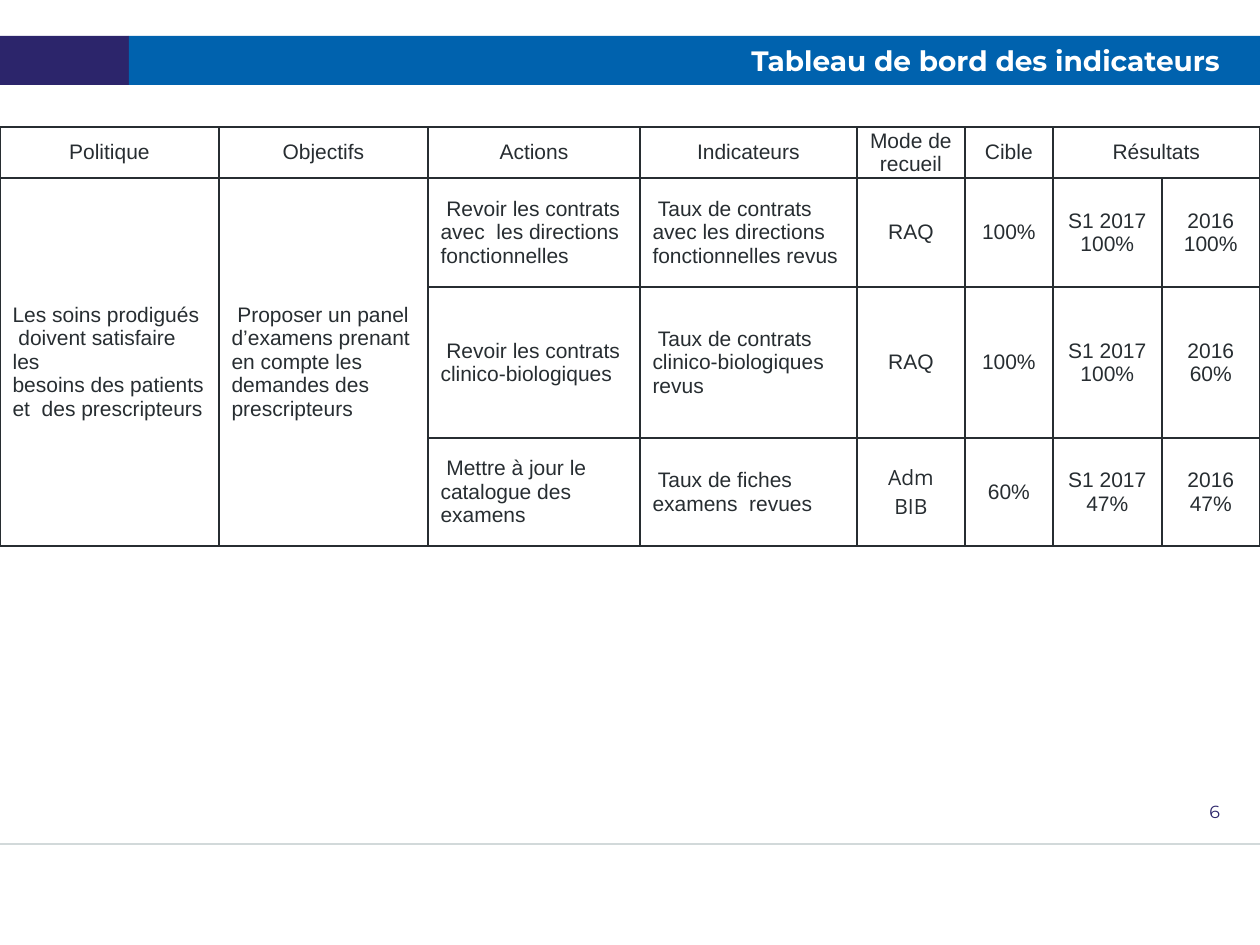
"""Build the indicator dashboard slide."""
from dataclasses import dataclass

from lxml import etree
from pptx import Presentation
from pptx import util as u
from pptx.dml.color import RGBColor
from pptx.enum import shapes, text
from pptx.oxml.ns import qn

SCALE = 914400 / 126
LEFT, CENTER, RIGHT = text.PP_ALIGN.LEFT, text.PP_ALIGN.CENTER, text.PP_ALIGN.RIGHT


@dataclass(frozen=True)
class Theme:
    violet: str = "2C256B"
    blue: str = "0062AE"
    white: str = "FFFFFF"
    ink: str = "272D31"
    rule: str = "D2D9DA"
    brand_font: str = "Montserrat"
    table_font: str = "Arial"
    accent_font: str = "Open Sans"
    title_size: int = 16
    table_size: int = 12
    number_size: int = 10
    rule_width: float = 0.75
    border_width: int = 1


@dataclass(frozen=True)
class Box:
    left: int
    top: int
    width: int
    height: int

    def emu(self) -> tuple[u.Emu, ...]:
        return tuple(px(n) for n in (self.left, self.top, self.width, self.height))


@dataclass(frozen=True)
class Band:
    box: Box
    color: str


@dataclass(frozen=True)
class Style:
    font: str
    size: int
    color: str
    align: text.PP_ALIGN
    bold: bool = False


@dataclass(frozen=True)
class Label:
    box: Box
    wording: str
    style: Style


@dataclass(frozen=True)
class Entry:
    row: int
    column: int
    wording: str
    row_span: int = 1
    column_span: int = 1
    font: str = Theme.table_font


THEME = Theme()
BANDS = (
    Band(Box(0, 36, 129, 49), THEME.violet),
    Band(Box(129, 36, 1131, 49), THEME.blue),
)
LABELS = (
    Label(Box(139, 36, 1081, 49), "Tableau de bord des indicateurs",
          Style(THEME.brand_font, THEME.title_size, THEME.white, RIGHT, True)),
    Label(Box(1126, 780, 94, 64), "6",
          Style(THEME.brand_font, THEME.number_size, THEME.violet, RIGHT)),
)
COLUMNS = (219, 209, 212, 217, 108, 88, 109, 98)
ROWS = (51, 109, 151, 108)
TEXT_COLUMNS = 4
HEADINGS = ("Politique", "Objectifs", "Actions", "Indicateurs", "Mode de recueil", "Cible")
MEASURES = (
    (" Revoir les contrats avec  les directions fonctionnelles",
     " Taux de contrats avec les directions fonctionnelles revus",
     "RAQ", "100%", "S1 2017\v100%", "2016\v100%"),
    (" Revoir les contrats clinico-biologiques",
     " Taux de contrats clinico-biologiques revus",
     "RAQ", "100%", "S1 2017\v100%", "2016\v60%"),
    (" Mettre à jour le catalogue des examens",
     " Taux de fiches examens  revues",
     "Adm BIB", "60%", "S1 2017\v47%", "2016\v47%"),
)
ENTRIES = (
    *(Entry(0, column, heading) for column, heading in enumerate(HEADINGS)),
    Entry(0, 6, "Résultats", column_span=2),
    Entry(1, 0, "Les soins prodigués\v doivent satisfaire les\nbesoins des patients\n"
                "et  des prescripteurs", row_span=3),
    Entry(1, 1, " Proposer un panel\nd’examens prenant\n"
                "en compte les demandes des prescripteurs", row_span=3),
    *(Entry(row, column, wording,
            font=THEME.accent_font if wording == "Adm BIB" else THEME.table_font)
      for row, measure in enumerate(MEASURES, 1)
      for column, wording in enumerate(measure, 2)),
)


def px(length: int) -> u.Emu:
    return u.Emu(round(length * SCALE))


def write(frame, wording: str, style: Style) -> None:
    frame.text = wording
    frame.word_wrap = True
    for paragraph in frame.paragraphs:
        paragraph.alignment = style.align
        font = paragraph.font
        font.name, font.size, font.bold = style.font, u.Pt(style.size), style.bold
        font.color.rgb = RGBColor.from_string(style.color)


def clear_margins(holder) -> None:
    holder.margin_left = holder.margin_right = 0
    holder.margin_top = holder.margin_bottom = 0


def draw_band(slide, band: Band) -> None:
    bar = slide.shapes.add_shape(shapes.MSO_SHAPE.RECTANGLE, *band.box.emu())
    bar.shadow.inherit = False
    bar.fill.solid()
    bar.fill.fore_color.rgb = RGBColor.from_string(band.color)
    bar.line.fill.background()


def draw_rule(slide, top: int, width: int) -> None:
    rule = slide.shapes.add_connector(
        shapes.MSO_CONNECTOR.STRAIGHT, 0, px(top), px(width), px(top))
    rule.line.color.rgb = RGBColor.from_string(THEME.rule)
    rule.line.width = u.Pt(THEME.rule_width)
    etree.SubElement(rule._element.spPr, qn("a:effectLst"))


def draw_label(slide, label: Label) -> None:
    frame = slide.shapes.add_textbox(*label.box.emu()).text_frame
    clear_margins(frame)
    frame.vertical_anchor = text.MSO_ANCHOR.MIDDLE
    write(frame, label.wording, label.style)


def add_borders(cell) -> None:
    properties = cell._tc.get_or_add_tcPr()
    for side in ("a:lnL", "a:lnR", "a:lnT", "a:lnB"):
        border = etree.SubElement(properties, qn(side), w=str(u.Pt(THEME.border_width)))
        fill = etree.SubElement(border, qn("a:solidFill"))
        etree.SubElement(fill, qn("a:srgbClr"), val=THEME.ink)


def fill_entry(table, entry: Entry) -> None:
    cell = table.cell(entry.row, entry.column)
    if entry.row_span > 1 or entry.column_span > 1:
        cell.merge(table.cell(entry.row + entry.row_span - 1,
                              entry.column + entry.column_span - 1))
    cell.vertical_anchor = text.MSO_ANCHOR.MIDDLE
    heading = entry.row == 0
    if heading:
        clear_margins(cell)
    align = CENTER if heading or entry.column >= TEXT_COLUMNS else LEFT
    write(cell.text_frame, entry.wording,
          Style(entry.font, THEME.table_size, THEME.ink, align))


def draw_dashboard(slide) -> None:
    box = Box(0, 127, sum(COLUMNS), sum(ROWS))
    table = slide.shapes.add_table(len(ROWS), len(COLUMNS), *box.emu()).table
    table.first_row = table.horz_banding = False
    for column, width in zip(table.columns, COLUMNS):
        column.width = px(width)
    for row, height in zip(table.rows, ROWS):
        row.height = px(height)
    for cell in table.iter_cells():
        add_borders(cell)
        cell.fill.background()
    for entry in ENTRIES:
        fill_entry(table, entry)


def main() -> None:
    deck = Presentation()
    deck.slide_width, deck.slide_height = px(1260), px(945)
    slide = deck.slides.add_slide(deck.slide_layouts[6])
    for band in BANDS:
        draw_band(slide, band)
    draw_rule(slide, 844, 1260)
    for label in LABELS:
        draw_label(slide, label)
    draw_dashboard(slide)
    deck.save("out.pptx")


if __name__ == "__main__":
    main()
